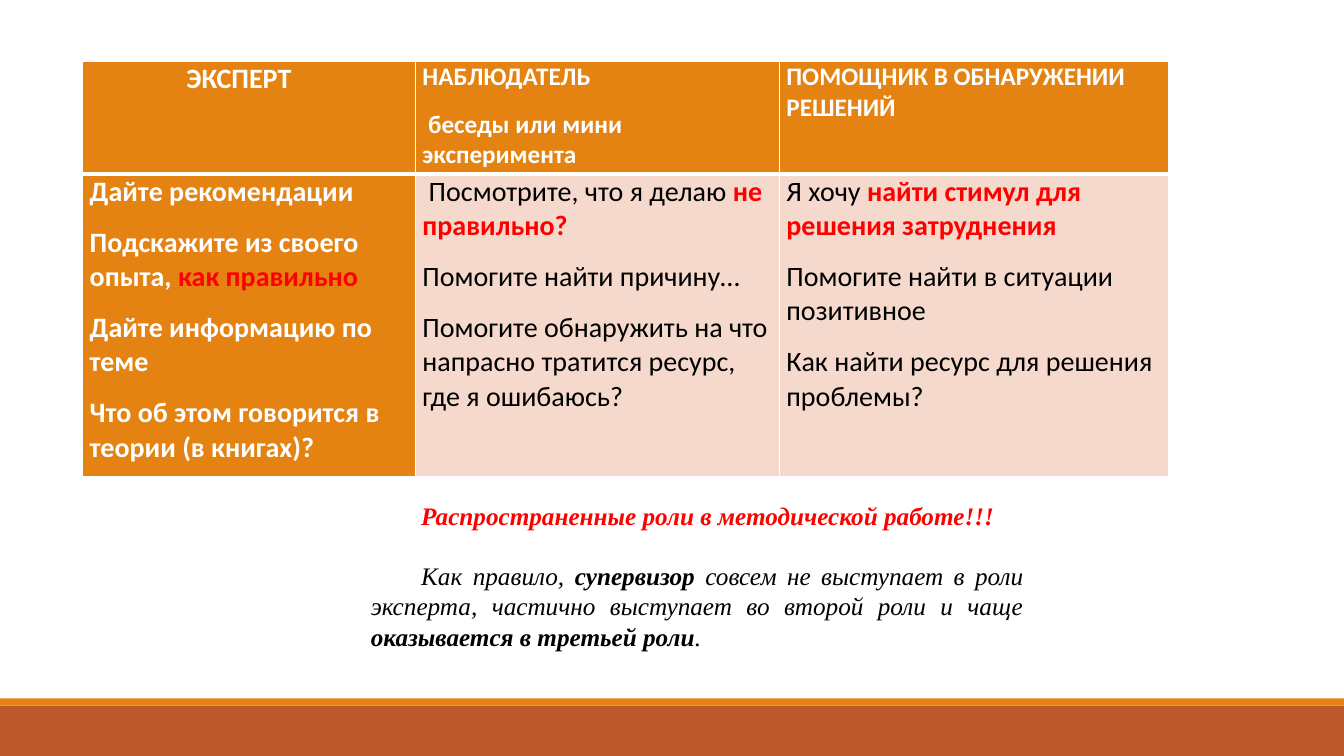
from dataclasses import dataclass

from lxml.etree import SubElement
from pptx import Presentation
from pptx.dml.color import RGBColor
from pptx.enum.shapes import MSO_SHAPE
from pptx.enum.text import PP_ALIGN
from pptx.oxml.ns import qn
from pptx.slide import Slide
from pptx.table import _Cell
from pptx.text.text import TextFrame, _Paragraph
from pptx.util import Inches, Pt

WHITE = RGBColor(0xFF, 0xFF, 0xFF)
BLACK = RGBColor(0x00, 0x00, 0x00)
RED = RGBColor(0xFF, 0x00, 0x00)
ORANGE = RGBColor(0xE4, 0x83, 0x12)
RUST = RGBColor(0xBD, 0x58, 0x2C)
BLUSH = RGBColor(0xF5, 0xD9, 0xCC)


@dataclass(frozen=True)
class Span:
    text: str
    color: RGBColor = BLACK
    bold: bool = False
    italic: bool = False


@dataclass(frozen=True)
class CellContent:
    paras: list[list[Span]]
    fill: RGBColor
    size: int = 20


@dataclass(frozen=True)
class Band:
    top: float
    height: float
    color: RGBColor


def white(text: str) -> Span:
    return Span(text, WHITE, bold=True)


def red(text: str) -> Span:
    return Span(text, RED, bold=True)


def note(text: str, color: RGBColor = BLACK, bold: bool = False) -> Span:
    return Span(text, color, bold, italic=True)


BANDS = [Band(7, 0.5, RUST), Band(6.93, 0.07, ORANGE)]
COLUMN_WIDTHS = [3.3, 3.61, 3.86]
ROW_HEIGHTS = [1.12, 3]
ROLES = [
    [
        CellContent([[white("ЭКСПЕРТ")]], ORANGE),
        CellContent([[white("НАБЛЮДАТЕЛЬ")],
                     [white(" беседы или мини эксперимента")]], ORANGE, 18),
        CellContent([[white("ПОМОЩНИК В ОБНАРУЖЕНИИ РЕШЕНИЙ")]], ORANGE, 18),
    ],
    [
        CellContent([
            [white("Дайте рекомендации")],
            [white("Подскажите из своего опыта, "), red("как правильно")],
            [white("Дайте информацию по теме")],
            [white("Что об этом говорится в теории (в книгах)?")],
        ], ORANGE),
        CellContent([
            [Span(" Посмотрите, что я делаю "), red("не правильно?")],
            [Span("Помогите найти причину…")],
            [Span("Помогите обнаружить на что напрасно тратится ресурс, "
                  "где я ошибаюсь?")],
        ], BLUSH),
        CellContent([
            [Span("Я хочу "), red("найти стимул для решения затруднения")],
            [Span("Помогите найти в ситуации позитивное")],
            [Span("Как найти ресурс для решения проблемы?")],
        ], BLUSH),
    ],
]
NOTES = [
    [note("Распространенные роли в методической работе!!!", RED, True)],
    [
        note("Как правило, "),
        note("супервизор ", bold=True),
        note("совсем не выступает в роли эксперта, частично выступает "
             "во второй роли и чаще "),
        note("оказывается в третьей роли", bold=True),
        note("."),
    ],
]


def write_paras(frame: TextFrame, paras: list[list[Span]], font: str,
                size: int, gap: float) -> list[_Paragraph]:
    """Fill the frame, leaving gap points between paragraphs."""
    for index, spans in enumerate(paras):
        para = frame.add_paragraph() if index else frame.paragraphs[0]
        para.space_before = Pt(gap if index else 0)
        for span in spans:
            run = para.add_run()
            run.text = span.text
            run.font.name = font
            run.font.size = Pt(size)
            run.font.bold = span.bold
            run.font.italic = span.italic
            run.font.color.rgb = span.color
    return list(frame.paragraphs)


def set_borders(cell: _Cell, widths: dict[str, float]) -> None:
    properties = cell._tc.get_or_add_tcPr()
    for side, width in widths.items():
        line = SubElement(properties, qn(f"a:ln{side}"), w=str(Pt(width)))
        fill = SubElement(line, qn("a:solidFill"))
        SubElement(fill, qn("a:srgbClr"), val=str(WHITE))


def add_band(page: Slide, band: Band, width: int) -> None:
    shape = page.shapes.add_shape(MSO_SHAPE.RECTANGLE, 0, Inches(band.top),
                                  width, Inches(band.height))
    shape.shadow.inherit = False
    shape.fill.solid()
    shape.fill.fore_color.rgb = band.color
    shape.line.fill.background()


def add_roles_table(page: Slide) -> None:
    table = page.shapes.add_table(
        len(ROW_HEIGHTS), len(COLUMN_WIDTHS), Inches(0.82), Inches(0.61),
        Inches(sum(COLUMN_WIDTHS)), Inches(sum(ROW_HEIGHTS))).table
    table.horz_banding = False
    for column, width in zip(table.columns, COLUMN_WIDTHS):
        column.width = Inches(width)
    for row, height in zip(table.rows, ROW_HEIGHTS):
        row.height = Inches(height)
    for row_index, contents in enumerate(ROLES):
        header = row_index == 0
        for column_index, content in enumerate(contents):
            cell = table.cell(row_index, column_index)
            cell.margin_left = cell.margin_right = Inches(0.07)
            cell.margin_top = cell.margin_bottom = 0
            set_borders(cell, {"L": 1, "R": 1, "T": 1 if header else 3,
                               "B": 3 if header else 1})
            cell.fill.solid()
            cell.fill.fore_color.rgb = content.fill
            write_paras(cell.text_frame, content.paras, "Calibri",
                        content.size, gap=12)
    expert = table.cell(0, 0)
    expert.margin_right = Inches(0.27)
    expert.text_frame.paragraphs[0].alignment = PP_ALIGN.CENTER


def add_notes_box(page: Slide) -> None:
    box = page.shapes.add_textbox(Inches(3.58), Inches(4.91),
                                  Inches(6.67), Inches(1.62))
    box.text_frame.word_wrap = True
    for para in write_paras(box.text_frame, NOTES, "Times New Roman", 18,
                            gap=21.6):
        para.alignment = PP_ALIGN.JUSTIFY
        para._p.get_or_add_pPr().set("indent", str(Inches(0.5)))


def main() -> None:
    deck = Presentation()
    deck.slide_width, deck.slide_height = Inches(13.33), Inches(7.5)
    page = deck.slides.add_slide(deck.slide_layouts[6])
    for band in BANDS:
        add_band(page, band, deck.slide_width)
    add_roles_table(page)
    add_notes_box(page)
    deck.save("out.pptx")


if __name__ == "__main__":
    main()
